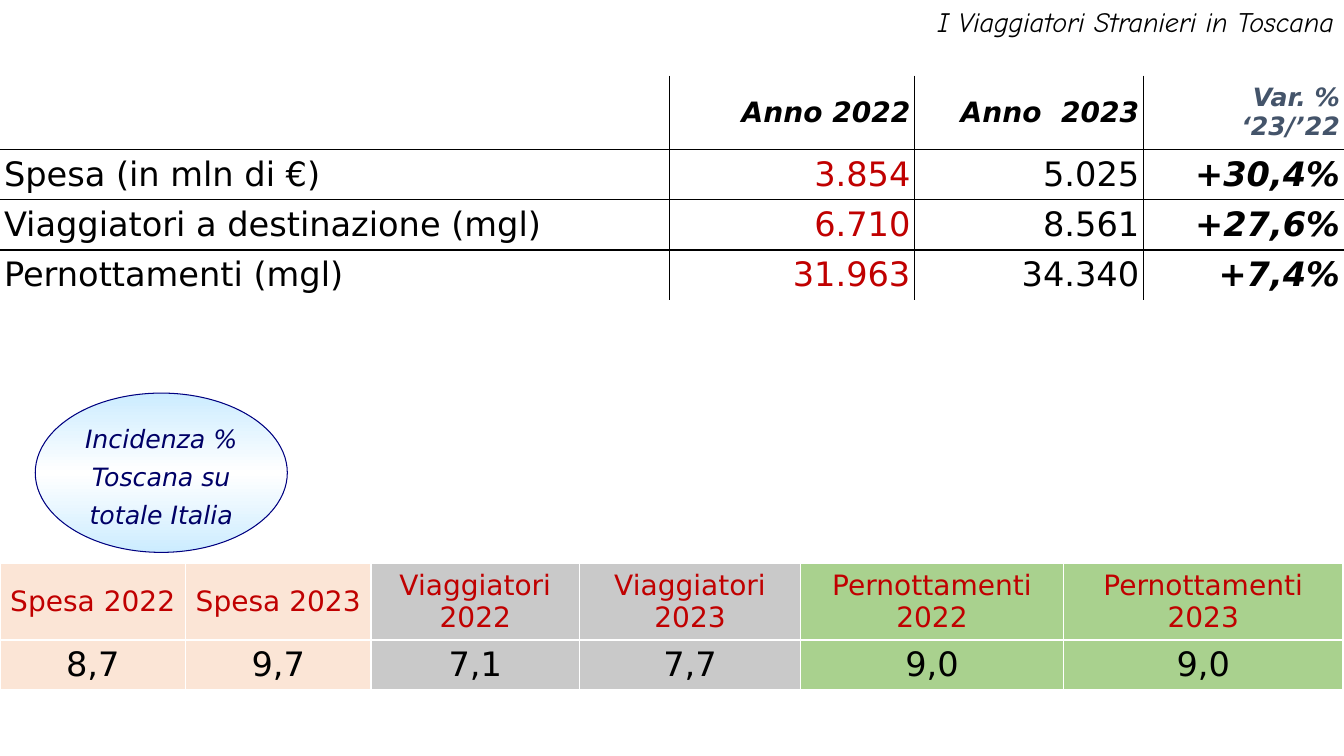
from copy import deepcopy

from lxml.etree import SubElement
from pptx import Presentation
from pptx.dml.color import RGBColor
from pptx.enum.shapes import MSO_SHAPE
from pptx.enum.text import MSO_ANCHOR, PP_ALIGN
from pptx.oxml.ns import qn
from pptx.util import Inches, Pt

COLORS = {
    "black": "000000", "white": "FFFFFF", "red": "C00000", "slate": "44546A",
    "navy": "000080", "ink": "000066", "sky": "CCECFF",
    "peach": "FBE5D6", "gray": "C9C9C9", "green": "A9D18E",
}


def color(name):
    return RGBColor.from_string(COLORS[name])


def write(frame, text, size=24, name="black", font="DejaVu Sans", bold=False,
          italic=False, align=PP_ALIGN.LEFT, before=0, spacing=1.0):
    frame.word_wrap = True
    paragraph = frame.paragraphs[0]
    paragraph.alignment = align
    paragraph.space_before = Pt(before)
    paragraph.line_spacing = spacing
    run = paragraph.add_run()
    run.text = text
    run.font.name = font
    run.font.size = Pt(size)
    run.font.bold = bold
    run.font.italic = italic
    run.font.color.rgb = color(name)


presentation = Presentation()
presentation.slide_width = Inches(13.33)
presentation.slide_height = Inches(7.5)
slide = presentation.slides.add_slide(presentation.slide_layouts[6])

# Contents of the two tables
totals = [
    ["", "Anno 2022", "Anno  2023", "Var. % ‘23/’22"],
    ["Spesa (in mln di €)", "3.854", "5.025", "+30,4%"],
    ["Viaggiatori a destinazione (mgl)", "6.710", "8.561", "+27,6%"],
    ["Pernottamenti (mgl)", "31.963", "34.340", "+7,4%"],
]
shares = [
    [f"{measure} {year}" for measure in ("Spesa", "Viaggiatori", "Pernottamenti")
     for year in (2022, 2023)],
    ["8,7", "9,7", "7,1", "7,7", "9,0", "9,0"],
]
share_fills = ["peach", "gray", "green"]

# Top, column widths, row heights, side margin, border colour, outer border
layouts = [
    (totals, 0.75, [6.64, 2.43, 2.27, 1.99], [0.73, 0.5, 0.5, 0.5], 0.04, "black", False),
    (shares, 5.59, [1.84, 1.84, 2.07, 2.19, 2.61, 2.77], [0.76, 0.49], 0.01, "white", True),
]

for rows, top, widths, heights, margin, border, outer in layouts:
    table = slide.shapes.add_table(
        len(rows), len(widths), Inches(0), Inches(top),
        Inches(sum(widths)), Inches(sum(heights))).table
    table.first_row = False
    table.horz_banding = False
    for column, width in zip(table.columns, widths):
        column.width = Inches(width)
    for row, height in zip(table.rows, heights):
        row.height = Inches(height)

    for r, values in enumerate(rows):
        for c, value in enumerate(values):
            cell = table.cell(r, c)
            cell.vertical_anchor = MSO_ANCHOR.MIDDLE
            cell.margin_left = cell.margin_right = Inches(margin)
            cell.margin_top = cell.margin_bottom = Inches(0.05)

            # Text and fill
            if rows is totals:
                cell.fill.background()
                header, change = r == 0, c == 3
                style = {"bold": header or change, "italic": header or change}
                style["align"] = PP_ALIGN.RIGHT if c else PP_ALIGN.LEFT
                if header:
                    style["size"] = 18 if change else 20
                    style["name"] = "slate" if change else "black"
                elif c == 1:
                    style["name"] = "red"
            else:
                cell.fill.solid()
                cell.fill.fore_color.rgb = color(share_fills[c // 2])
                style = {"align": PP_ALIGN.CENTER}
                if r == 0:
                    style.update(size=20, name="red")
                elif c >= 4:
                    cell.vertical_anchor = MSO_ANCHOR.BOTTOM
            if value:
                write(cell.text_frame, value, **style)

            # Borders
            inner = {"a:lnL": c > 0, "a:lnR": c < len(widths) - 1,
                     "a:lnT": r > 0, "a:lnB": r < len(rows) - 1}
            properties = cell._tc.get_or_add_tcPr()
            for position, (side, is_inner) in enumerate(inner.items()):
                line = SubElement(properties, qn(side), w=str(Pt(0.96)))
                if outer or is_inner:
                    fill = SubElement(line, qn("a:solidFill"))
                    SubElement(fill, qn("a:srgbClr"), val=COLORS[border])
                else:
                    SubElement(line, qn("a:noFill"))
                properties.insert(position, line)

# Heading
heading = slide.shapes.add_textbox(Inches(7.94), Inches(0), Inches(5.39), Inches(0.43))
write(heading.text_frame, "I Viaggiatori Stranieri in Toscana", size=20,
      font="Comic Neue", italic=True, align=PP_ALIGN.RIGHT, before=10)

# Ellipse with a three-stop gradient
ellipse = slide.shapes.add_shape(
    MSO_SHAPE.OVAL, Inches(0.35), Inches(3.9), Inches(2.5), Inches(1.58))
ellipse.shadow.inherit = False
ellipse.line.color.rgb = color("navy")
ellipse.line.width = Pt(0.75)
ellipse.fill.gradient()
ellipse.fill.gradient_angle = 90
stop_list = ellipse._element.spPr.find(".//" + qn("a:gsLst"))
stop_list.append(deepcopy(stop_list[-1]))
for stop, position, name in zip(ellipse.fill.gradient_stops, (0, 0.5, 1),
                                ("sky", "white", "sky")):
    stop.position = position
    stop.color.rgb = color(name)
ellipse.text_frame.vertical_anchor = MSO_ANCHOR.MIDDLE
write(ellipse.text_frame, "Incidenza % Toscana su totale Italia", size=18,
      name="ink", italic=True, align=PP_ALIGN.CENTER, before=1.8, spacing=1.25)

presentation.save("out.pptx")
